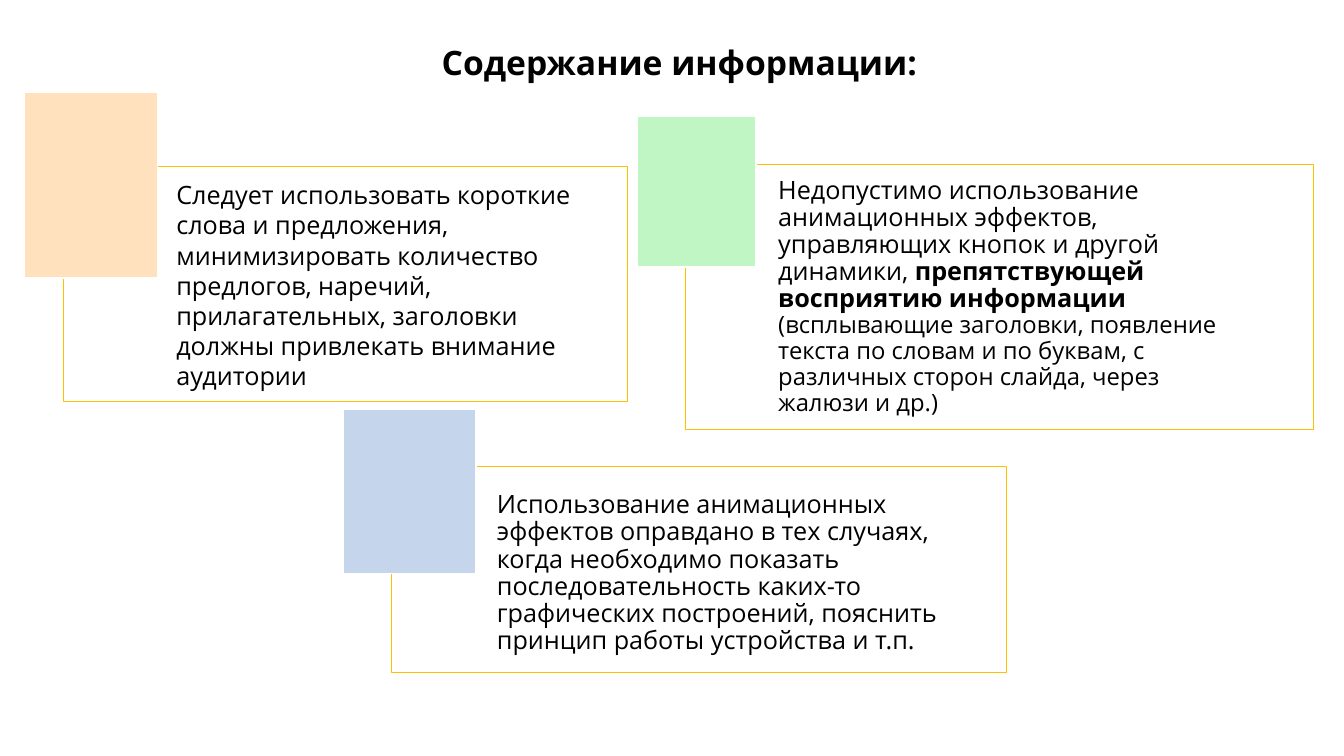
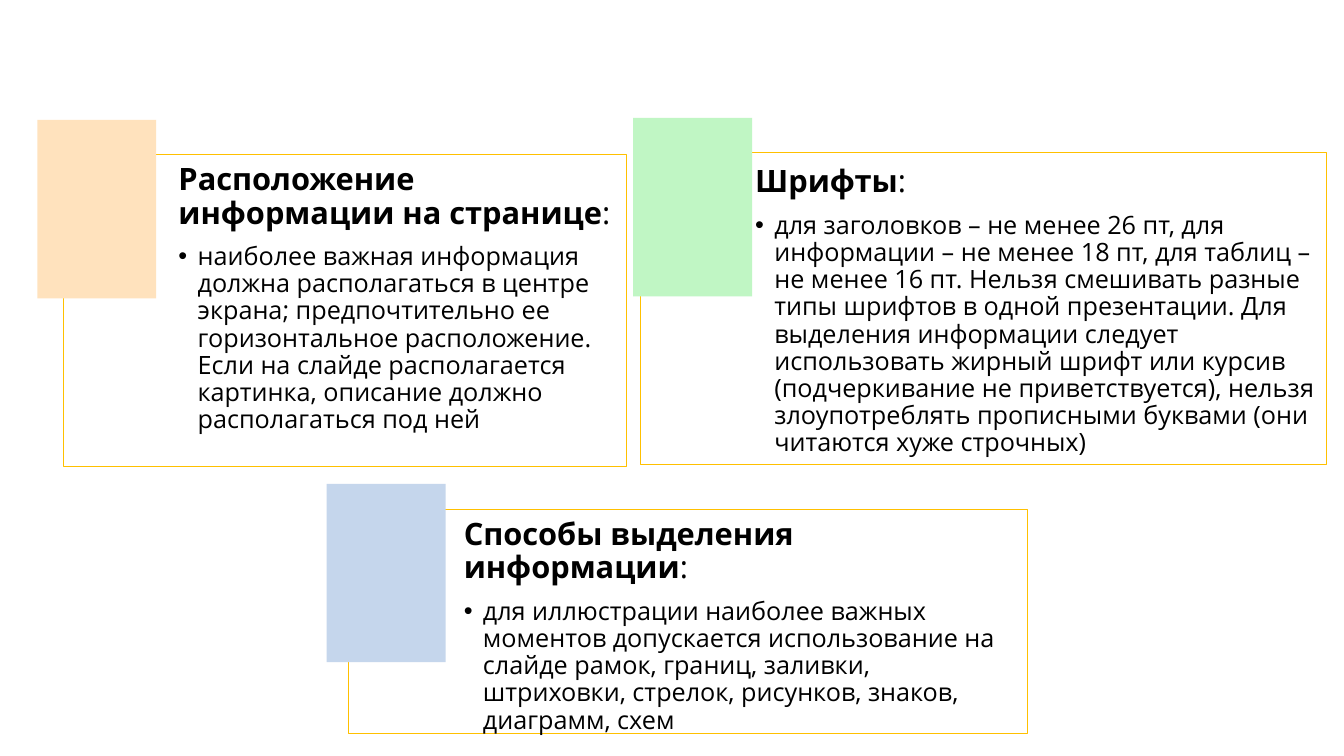
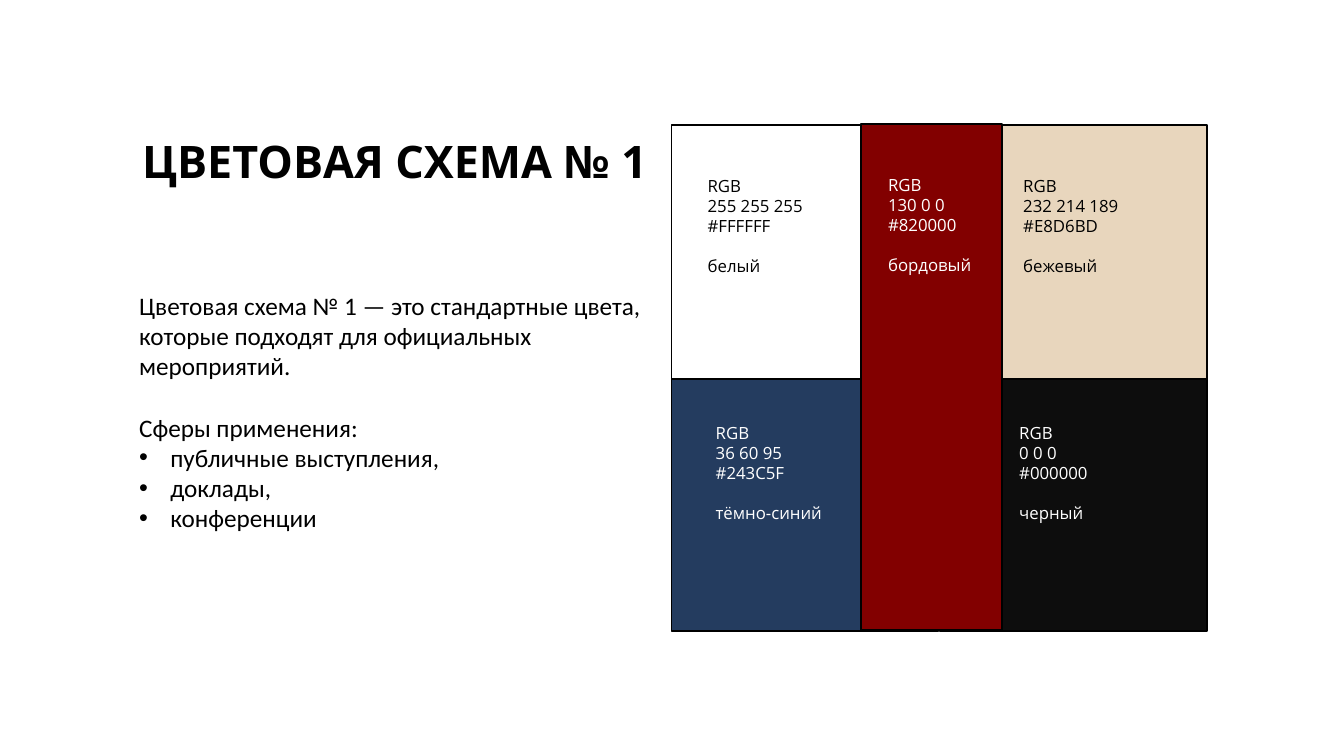
from lxml import etree
from pptx import Presentation
from pptx import util as u
from pptx.dml import color
from pptx.enum import shapes, text
from pptx.oxml import ns

INK, WHITE, GOLD = "000000", "FFFFFF", "FFC000"
TABS = ("FFE2BD", "C0F6C4", "C5D6EC")
BODY = {"name": "Open Sans", "size": u.Pt(18), "bold": False}
HEAD = {**BODY, "size": u.Pt(22), "bold": True}
BOLD = {**BODY, "bold": True}
SMALL = {**BODY, "size": u.Pt(17)}
LABEL = {**BODY, "size": u.Pt(12)}
PLAIN = {**BODY, "name": "Calibri"}
TIGHT = {"line_spacing": 0.9}

NOTES = [
    ((0.63, 1.65, 5.59, 2.33), (-0.39, -0.73, 1.32, 1.84),
     (1.02, 0.08, 4.41, 2.22), {},
     [("Следует использовать короткие слова и предложения, минимизировать "
       "количество предлогов, наречий, прилагательных, заголовки должны "
       "привлекать внимание аудитории", BODY)]),
    ((6.8, 1.63, 6.23, 2.63), (-0.48, -0.48, 1.18, 1.5),
     (0.82, 0.08, 4.78, 2.49), TIGHT,
     [("Недопустимо использование анимационных эффектов, управляющих кнопок "
       "и другой динамики, ", BODY),
      ("препятствующей восприятию информации ", BOLD),
      ("(всплывающие заголовки, появление текста по словам и по буквам, "
       "с различных сторон слайда, через жалюзи и др.)", SMALL)]),
    ((3.88, 4.63, 6.1, 2.04), (-0.48, -0.57, 1.32, 1.63),
     (0.95, 0.2, 4.95, 1.74), TIGHT,
     [("Использование анимационных эффектов оправдано в тех случаях, когда "
       "необходимо показать последовательность каких-то графических "
       "построений, пояснить принцип работы устройства и т.п.", BODY)]),
]

TOPICS = [
    ((0.63, 1.53, 5.58, 3.1), (-0.26, -0.34), (5.59, 2.88), 0.1,
     "Расположение информации на странице",
     "наиболее важная информация должна располагаться в центре экрана; "
     "предпочтительно ее горизонтальное расположение. Если на слайде "
     "располагается картинка, описание должно располагаться под ней"),
    ((6.35, 1.51, 6.81, 3.1), (-0.07, -0.34), (6.98, 2.74), 0.14,
     "Шрифты",
     "для заголовков – не менее 26 пт, для информации – не менее 18 пт, для "
     "таблиц – не менее 16 пт. Нельзя смешивать разные типы шрифтов в одной "
     "презентации. Для выделения информации следует использовать жирный "
     "шрифт или курсив (подчеркивание не приветствуется), нельзя "
     "злоупотреблять прописными буквами (они читаются хуже строчных)"),
    ((3.46, 5.05, 6.73, 2.23), (-0.22, -0.25), (6.73, 2.06), 0.1,
     "Способы выделения информации",
     "для иллюстрации наиболее важных моментов допускается использование на "
     "слайде рамок, границ, заливки, штриховки, стрелок, рисунков, знаков, "
     "диаграмм, схем"),
]

SWATCHES = [
    ((0, 0.01, 2.65, 2.52), WHITE, INK, (0.26, 0.45, 1.7),
     ("255 255 255", "#FFFFFF", "белый")),
    ((2.66, 0.01, 2.65, 2.52), "E8D6BD", INK, (0.73, 0.45, 1.75),
     ("232 214 189", "#E8D6BD", "бежевый")),
    ((0, 2.53, 2.65, 2.5), "243C5F", WHITE, (0.34, 0.38, 2.32),
     ("36 60 95", "#243C5F", "тёмно-синий")),
    ((2.66, 2.53, 2.65, 2.5), "0D0D0D", WHITE, (0.69, 0.38, 2.32),
     ("0 0 0", "#000000", "черный")),
    ((1.88, 0, 1.4, 5.02), "820000", WHITE, (0.17, 0.45, 1.17),
     ("130 0 0", "#820000", "бордовый")),
]


def rgb(code):
    """Turn a hex string into a colour."""
    return color.RGBColor.from_string(code)


def inner(box, part):
    """Shift a part by the corner of the box that holds it."""
    return (box[0] + part[0], box[1] + part[1], *part[2:])


def apply(item, style):
    """Set every attribute named in the style."""
    for key, value in style.items():
        setattr(item, key, value)


def rect(slide, box, fill, line=None, width=1, alpha=None):
    """Draw a flat rectangle."""
    shape = slide.shapes.add_shape(
        shapes.MSO_SHAPE.RECTANGLE, *map(u.Inches, box))
    shape.shadow.inherit = False
    shape.fill.solid()
    shape.fill.fore_color.rgb = rgb(fill)
    if alpha:
        tint = shape.fill._xPr.find(".//" + ns.qn("a:srgbClr"))
        etree.SubElement(tint, ns.qn("a:alpha"), val=str(alpha * 1000))
    if line:
        shape.line.color.rgb = rgb(line)
        shape.line.width = u.Pt(width)
    else:
        shape.line.fill.background()


def bullet(para, indent):
    """Give a paragraph a hanging bullet, or none when indent is zero."""
    props = para._p.get_or_add_pPr()
    props.set("marL", str(u.Inches(indent)))
    props.set("indent", str(-u.Inches(indent)))
    if indent:
        etree.SubElement(props, ns.qn("a:buFont"), typeface="Arial")
        etree.SubElement(props, ns.qn("a:buChar"), char="•")
    else:
        etree.SubElement(props, ns.qn("a:buNone"))


def write(frame, paras, ink=INK):
    """Fill a text frame with (runs, style, indent) paragraphs."""
    apply(frame, {"word_wrap": True, "auto_size": text.MSO_AUTO_SIZE.NONE,
                  "vertical_anchor": text.MSO_ANCHOR.TOP})
    for num, (runs, style, indent) in enumerate(paras):
        para = frame.add_paragraph() if num else frame.paragraphs[0]
        bullet(para, indent)
        apply(para, {"alignment": text.PP_ALIGN.LEFT,
                     "space_before": u.Pt(0), **style})
        for words, font in runs:
            run = para.add_run()
            run.text = words
            apply(run.font, font)
            run.font.color.rgb = rgb(ink)


def place(holder, box, paras):
    """Move a placeholder to a box and fill it."""
    sides = ("left", "top", "width", "height")
    apply(holder, dict(zip(sides, map(u.Inches, box))))
    write(holder.text_frame, paras)


def label(slide, box, paras, ink=INK, inset=None):
    """Add a text box."""
    frame = slide.shapes.add_textbox(*map(u.Inches, box)).text_frame
    if inset:
        sides = ("margin_left", "margin_top", "margin_right", "margin_bottom")
        apply(frame, dict(zip(sides, map(u.Inches, inset))))
    write(frame, paras, ink)


def card(slide, box, tab, fill, edge, area, paras, inset=None):
    """Draw a framed text with a coloured tab on its corner."""
    rect(slide, box, WHITE, GOLD, 0.5, alpha=40)
    rect(slide, inner(box, tab), fill, edge)
    label(slide, inner(box, area), paras, inset=inset)


def swatch(slide, box, fill, ink, spot, lines):
    """Draw a colour field with its codes and name."""
    rect(slide, box, fill, INK)
    code, mark, name = lines
    paras = [([(line, LABEL)], {}, 0) for line in ("RGB", code, mark)]
    paras.append(([(name, LABEL)], {"space_before": u.Pt(14.4)}, 0))
    label(slide, inner(box, (*spot, 1.11)), paras, ink)


def notes(deck):
    """Build the slide on content."""
    slide = deck.slides.add_slide(deck.slide_layouts[5])
    font = {**BOLD, "size": u.Pt(24)}
    place(slide.shapes.title, (4.28, 0.41, 5.24, 0.46),
          [([("Содержание информации:", font)], TIGHT, 0)])
    for fill, (box, tab, area, style, runs) in zip(TABS, NOTES):
        card(slide, box, tab, fill, WHITE, area, [(runs, style, 0)])


def topics(deck):
    """Build the slide on layout, fonts and emphasis."""
    slide = deck.slides.add_slide(deck.slide_layouts[6])
    for fill, (box, tab, size, pad, head, body) in zip(TABS, TOPICS):
        colon = {**HEAD, "bold": False}
        paras = [
            ([(head, HEAD), (":", colon)],
             {**TIGHT, "space_after": u.Pt(9.2)}, 0),
            ([(body, BODY)], {**TIGHT, "level": 1}, 0.19),
        ]
        card(slide, box, (*tab, 1.18, 1.77), fill, None, (0, 0, *size),
             paras, (1.14, pad, pad, pad))


def scheme(deck):
    """Build the slide on the colour scheme."""
    slide = deck.slides.add_slide(deck.slide_layouts[1])
    font = {**BOLD, "size": u.Pt(32)}
    place(slide.shapes.title, (1.31, 1.28, 5.35, 0.64),
          [([("ЦВЕТОВАЯ СХЕМА № 1", font)], {}, 0)])
    paras = [
        ([("Цветовая схема № 1 — это стандартные цвета, которые подходят "
           "для официальных мероприятий.", PLAIN)], {}, 0),
        ([("Сферы применения:", PLAIN)], {"space_before": u.Pt(22)}, 0),
    ]
    uses = ("публичные выступления,", "доклады,", "конференции")
    paras += [([(use, PLAIN)], {}, 0.31) for use in uses]
    place(slide.placeholders[1], (1.28, 2.83, 5.36, 2.83), paras)
    for box, *rest in SWATCHES:
        swatch(slide, inner((6.66, 1.23), box), *rest)


def main():
    """Build and save the deck."""
    deck = Presentation()
    deck.slide_width, deck.slide_height = u.Inches(13.33), u.Inches(7.5)
    for build in (notes, topics, scheme):
        build(deck)
    deck.save("out.pptx")


if __name__ == "__main__":
    main()
